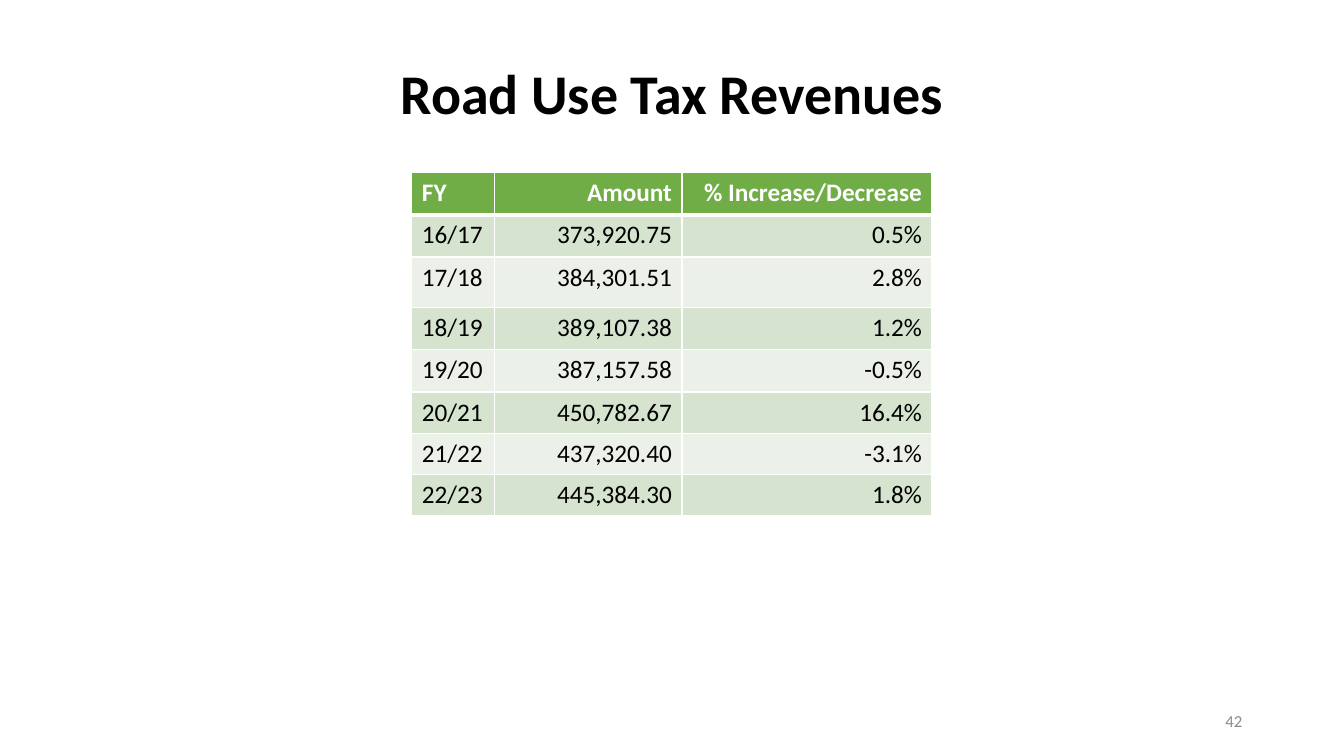
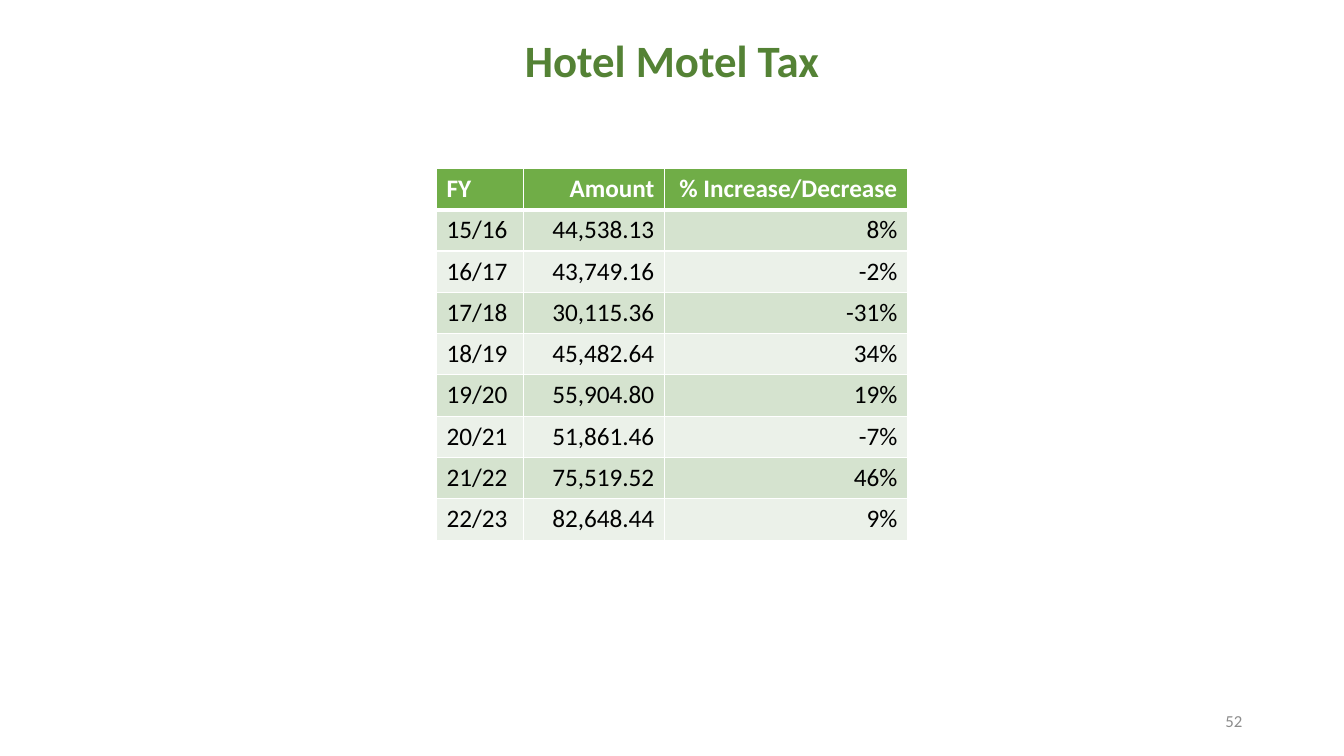
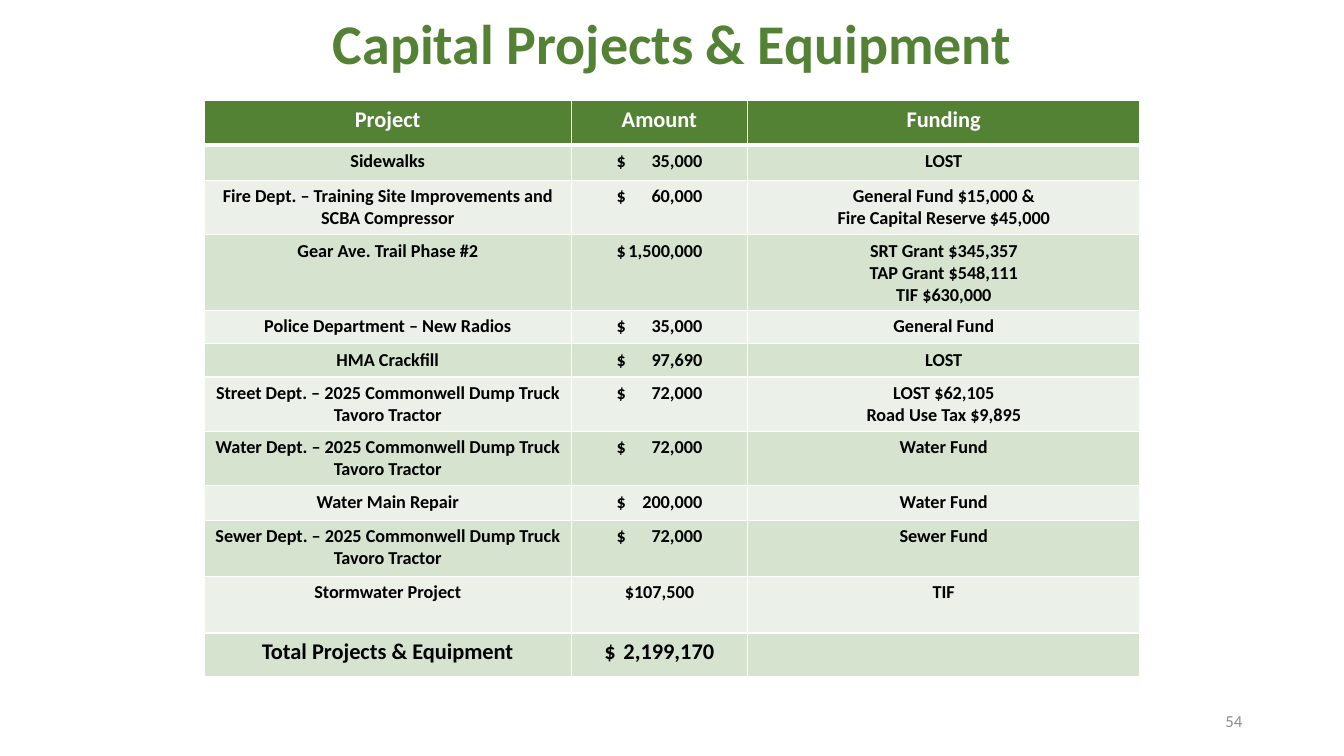
from lxml import etree
from pptx import Presentation
from pptx import util as u
from pptx.dml.color import RGBColor
from pptx.enum import text
from pptx.oxml.ns import qn

SLIDE_W, SLIDE_H = 13.33, 7.5
FONT = "Calibri"
BLACK = RGBColor(0x00, 0x00, 0x00)
WHITE = RGBColor(0xFF, 0xFF, 0xFF)
GREY = RGBColor(0x8C, 0x8C, 0x8C)
GREEN = RGBColor(0x70, 0xAD, 0x47)
DARK_GREEN = RGBColor(0x54, 0x82, 0x35)
BANDS = (RGBColor(0xD5, 0xE3, 0xCF), RGBColor(0xEB, 0xF1, 0xE9))

LEFT, CENTER, RIGHT = (text.PP_ALIGN.LEFT, text.PP_ALIGN.CENTER,
                       text.PP_ALIGN.RIGHT)
TAX_HEADER = ("FY", "Amount", "% Increase/Decrease")
TAX_ALIGNS = (LEFT, RIGHT, RIGHT)

ROAD_USE = [
    ("16/17", "373,920.75", "0.5%"),
    ("17/18", "384,301.51", "2.8%"),
    ("18/19", "389,107.38", "1.2%"),
    ("19/20", "387,157.58", "-0.5%"),
    ("20/21", "450,782.67", "16.4%"),
    ("21/22", "437,320.40", "-3.1%"),
    ("22/23", "445,384.30", "1.8%"),
]
HOTEL_MOTEL = [
    ("15/16", "44,538.13", "8%"),
    ("16/17", "43,749.16", "-2%"),
    ("17/18", "30,115.36", "-31%"),
    ("18/19", "45,482.64", "34%"),
    ("19/20", "55,904.80", "19%"),
    ("20/21", "51,861.46", "-7%"),
    ("21/22", "75,519.52", "46%"),
    ("22/23", "82,648.44", "9%"),
]
TRUCK = "{} Dept. – 2025 Commonwell Dump Truck\nTavoro Tractor"
PROJECTS = [
    ("Sidewalks", "$ 35,000", "LOST"),
    ("Fire Dept. – Training Site Improvements and SCBA Compressor",
     "$ 60,000", "General Fund $15,000 &\nFire Capital Reserve $45,000"),
    ("Gear Ave. Trail Phase #2", "$ 1,500,000",
     "SRT Grant $345,357\nTAP Grant $548,111\nTIF $630,000"),
    ("Police Department – New Radios", "$ 35,000", "General Fund"),
    ("HMA Crackfill", "$ 97,690", "LOST"),
    (TRUCK.format("Street"), "$ 72,000",
     "LOST $62,105\nRoad Use Tax $9,895"),
    (TRUCK.format("Water"), "$ 72,000", "Water Fund"),
    ("Water Main Repair", "$ 200,000", "Water Fund"),
    (TRUCK.format("Sewer"), "$ 72,000", "Sewer Fund"),
    ("Stormwater Project", "$107,500", "TIF"),
    ("Total Projects & Equipment", "$ 2,199,170", ""),
]


def write(frame, words, *, size, color=BLACK, bold=False, align=LEFT,
          spacing=None, anchor=None):
    """Fill a text frame, one paragraph for each line of words."""
    frame.word_wrap = True
    if anchor is not None:
        frame.vertical_anchor = anchor
    for i, line in enumerate(words.split("\n")):
        para = frame.add_paragraph() if i else frame.paragraphs[0]
        para.alignment = align
        if spacing:
            para.line_spacing = spacing
        run = para.add_run()
        run.text = line
        run.font.name = FONT
        run.font.size = u.Pt(size)
        run.font.bold = bold
        run.font.color.rgb = color


def set_borders(cell, top=1, bottom=1):
    """Draw white cell borders, widths in points."""
    props = cell._tc.get_or_add_tcPr()
    for side, width in (("L", 1), ("R", 1), ("T", top), ("B", bottom)):
        line = etree.SubElement(props, qn("a:ln" + side), w=str(u.Pt(width)))
        fill = etree.SubElement(line, qn("a:solidFill"))
        etree.SubElement(fill, qn("a:srgbClr"), val=str(WHITE))


def write_dollars(cell, amount, column_width, inset, **style):
    """Put the dollar sign at the left inset, the figure at the right one."""
    cell.margin_left = u.Inches(inset)
    write(cell.text_frame, amount.replace("$ ", "$\t"), **style)
    props = cell.text_frame.paragraphs[0]._p.get_or_add_pPr()
    stops = etree.SubElement(props, qn("a:tabLst"))
    etree.SubElement(stops, qn("a:tab"), algn="r",
                     pos=str(u.Inches(column_width - 2 * inset)))


def add_title_and_number(prs, title, number, box, size, color):
    slide = prs.slides.add_slide(prs.slide_layouts[5])
    # Title, centred across the slide
    top, width, height = box
    heading = slide.shapes.title
    heading.left, heading.top = u.Inches((SLIDE_W - width) / 2), u.Inches(top)
    heading.width, heading.height = u.Inches(width), u.Inches(height)
    heading.text_frame.auto_size = text.MSO_AUTO_SIZE.NONE
    write(heading.text_frame, title, size=size, color=color, bold=True,
          align=CENTER, spacing=0.9, anchor=text.MSO_ANCHOR.MIDDLE)
    # Page number
    page = slide.shapes.add_textbox(u.Inches(9.42), u.Inches(6.95),
                                    u.Inches(3), u.Inches(0.4))
    write(page.text_frame, str(number), size=12, color=GREY, align=RIGHT,
          anchor=text.MSO_ANCHOR.MIDDLE)
    return slide


def add_banded_table(slide, top, columns, heights, rows, aligns, header_fill,
                     header_size=18, size=18, bold=False, total_size=None):
    """Place a table centred across the slide; rows[0] is its header."""
    width = sum(columns)
    table = slide.shapes.add_table(
        len(rows), len(columns), u.Inches((SLIDE_W - width) / 2),
        u.Inches(top), u.Inches(width), u.Inches(sum(heights))).table
    for column, column_width in zip(table.columns, columns):
        column.width = u.Inches(column_width)
    for r, (row, height) in enumerate(zip(rows, heights)):
        table.rows[r].height = u.Inches(height)
        is_header = r == 0
        is_total = total_size is not None and r == len(rows) - 1
        points = (header_size if is_header
                  else total_size if is_total else size)
        for c, words in enumerate(row):
            cell = table.cell(r, c)
            set_borders(cell, top=3 if r == 1 else 1,
                        bottom=3 if is_header else 1)
            cell.fill.solid()
            cell.fill.fore_color.rgb = (header_fill if is_header
                                        else BANDS[(r - 1) % 2])
            style = dict(size=points, bold=bold or is_header,
                         color=WHITE if is_header else BLACK)
            if words.startswith("$ "):
                write_dollars(cell, words, columns[c],
                              0.33 if is_total else 0.45, **style)
            elif words:
                write(cell.text_frame, words, align=aligns[c], **style)


def main():
    prs = Presentation()
    prs.slide_width, prs.slide_height = u.Inches(SLIDE_W), u.Inches(SLIDE_H)

    # Road use tax
    road = add_title_and_number(prs, "Road Use Tax Revenues", 42,
                                (0.33, 8.5, 1.25), 40, BLACK)
    add_banded_table(road, 1.71, (0.82, 1.86, 2.48),
                     [0.42, 0.42, 0.5, 0.42, 0.42] + [0.41] * 3,
                     [TAX_HEADER] + ROAD_USE, TAX_ALIGNS, GREEN)

    # Hotel motel tax
    hotel = add_title_and_number(prs, "Hotel Motel Tax", 52,
                                 (0, 11.33, 1.25), 32, DARK_GREEN)
    add_banded_table(hotel, 1.67, (0.86, 1.4, 2.41), [0.41] * 9,
                     [TAX_HEADER] + HOTEL_MOTEL, TAX_ALIGNS, GREEN)

    # Capital projects
    capital = add_title_and_number(prs, "Capital Projects & Equipment", 54,
                                   (0, 8.5, 0.92), 40, DARK_GREEN)
    add_banded_table(capital, 1, (3.64, 1.75, 3.89),
                     [0.44, 0.35, 0.54, 0.75, 0.33, 0.33,
                      0.54, 0.54, 0.34, 0.56, 0.56, 0.43],
                     [("Project", "Amount", "Funding")] + PROJECTS,
                     (CENTER,) * 3, DARK_GREEN, header_size=16, size=13,
                     bold=True, total_size=16)

    prs.save("out.pptx")


if __name__ == "__main__":
    main()
